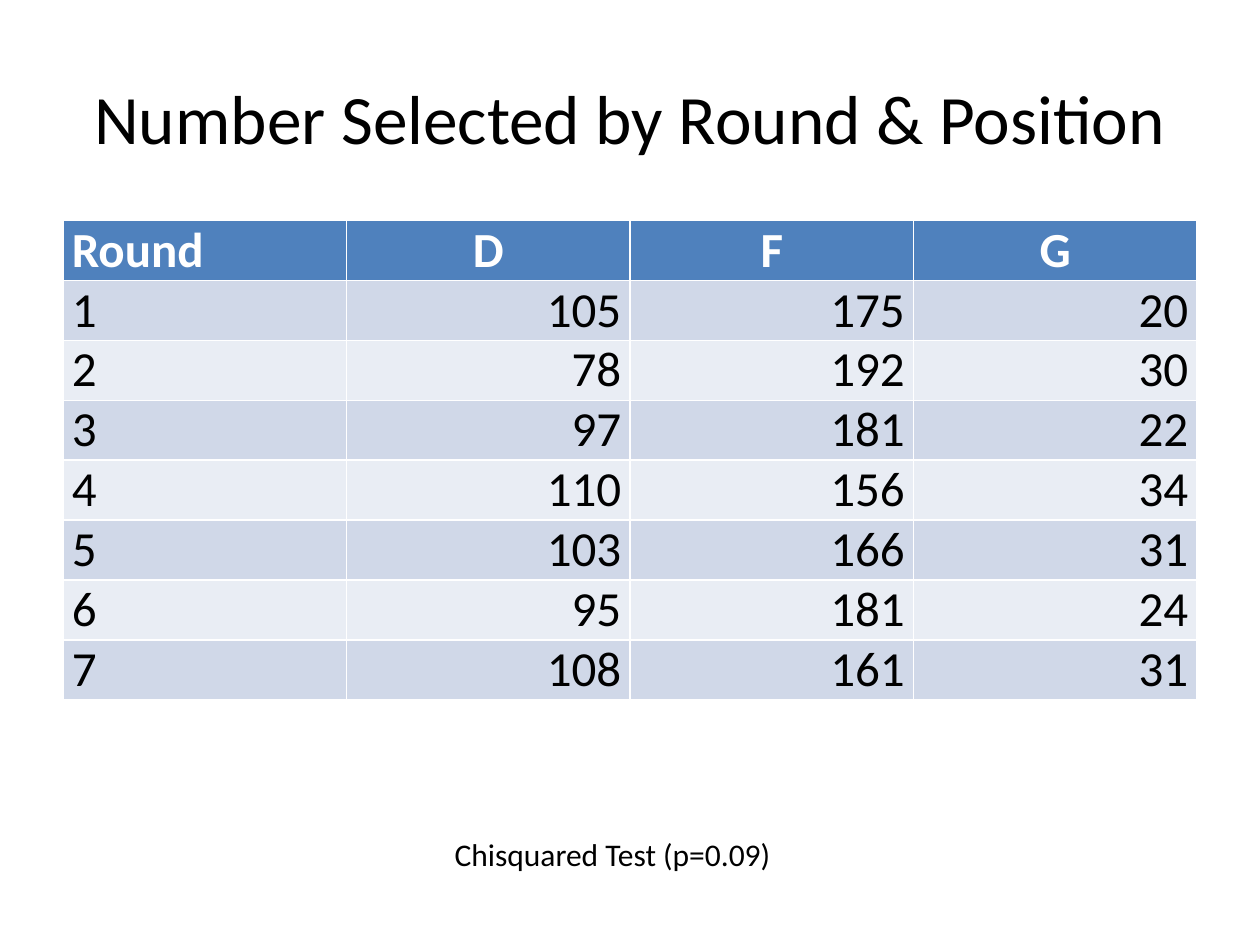
import pptx
import pptx.util
import pptx.dml.color
import pptx.enum.text

Inches = pptx.util.Inches
Align = pptx.enum.text.PP_ALIGN
Anchor = pptx.enum.text.MSO_ANCHOR

HUES = {"text": "000000", "white": "FFFFFF", "head": "4F81BD",
        "odd": "D0D8E8", "even": "E9EDF4"}
ROWS = [
    ("Round", "D", "F", "G"),
    (1, 105, 175, 20),
    (2, 78, 192, 30),
    (3, 97, 181, 22),
    (4, 110, 156, 34),
    (5, 103, 166, 31),
    (6, 95, 181, 24),
    (7, 108, 161, 31),
]


def color(name):
    return pptx.dml.color.RGBColor.from_string(HUES[name])


def write(frame, text, size, hue="text", align=Align.LEFT, bold=False):
    para = frame.paragraphs[0]
    para.text = str(text)
    para.alignment = align
    style = {"name": "Calibri", "size": pptx.util.Pt(size), "bold": bold}
    for key, value in style.items():
        setattr(para.runs[0].font, key, value)
    para.runs[0].font.color.rgb = color(hue)


deck = pptx.Presentation()
deck.slide_width, deck.slide_height = Inches(10), Inches(7.5)
slide = deck.slides.add_slide(deck.slide_layouts[5])

# Title
title = slide.shapes.title
place = {"left": 0.5, "top": 0.3, "width": 9, "height": 1.25}
for key, value in place.items():
    setattr(title, key, Inches(value))
title.text_frame.vertical_anchor = Anchor.MIDDLE
write(title.text_frame, "Number Selected by Round & Position", 39.6,
      align=Align.CENTER)

# Counts by round; the default table style draws the white rules
table = slide.shapes.add_table(
    len(ROWS), len(ROWS[0]),
    Inches(0.5), Inches(1.75), Inches(9), Inches(3.73)).table
margins = {"margin_left": 0.07, "margin_top": 0,
           "margin_right": 0.07, "margin_bottom": 0}
for r, row in enumerate(ROWS):
    head = r == 0
    fill = "head" if head else "odd" if r % 2 else "even"
    for c, value in enumerate(row):
        cell = table.cell(r, c)
        cell.fill.solid()
        cell.fill.fore_color.rgb = color(fill)
        for key, gap in margins.items():
            setattr(cell, key, Inches(gap))
        if c == 0:
            align = Align.LEFT
        else:
            align = Align.CENTER if head else Align.RIGHT
        write(cell.text_frame, value, 28, "white" if head else "text",
              align, head)

# Test result
note = slide.shapes.add_textbox(
    Inches(3.51), Inches(6.58), Inches(2.74), Inches(0.4)).text_frame
note.word_wrap = False
note.auto_size = pptx.enum.text.MSO_AUTO_SIZE.SHAPE_TO_FIT_TEXT
write(note, "Chisquared Test (p=0.09)", 18)

deck.save("out.pptx")
